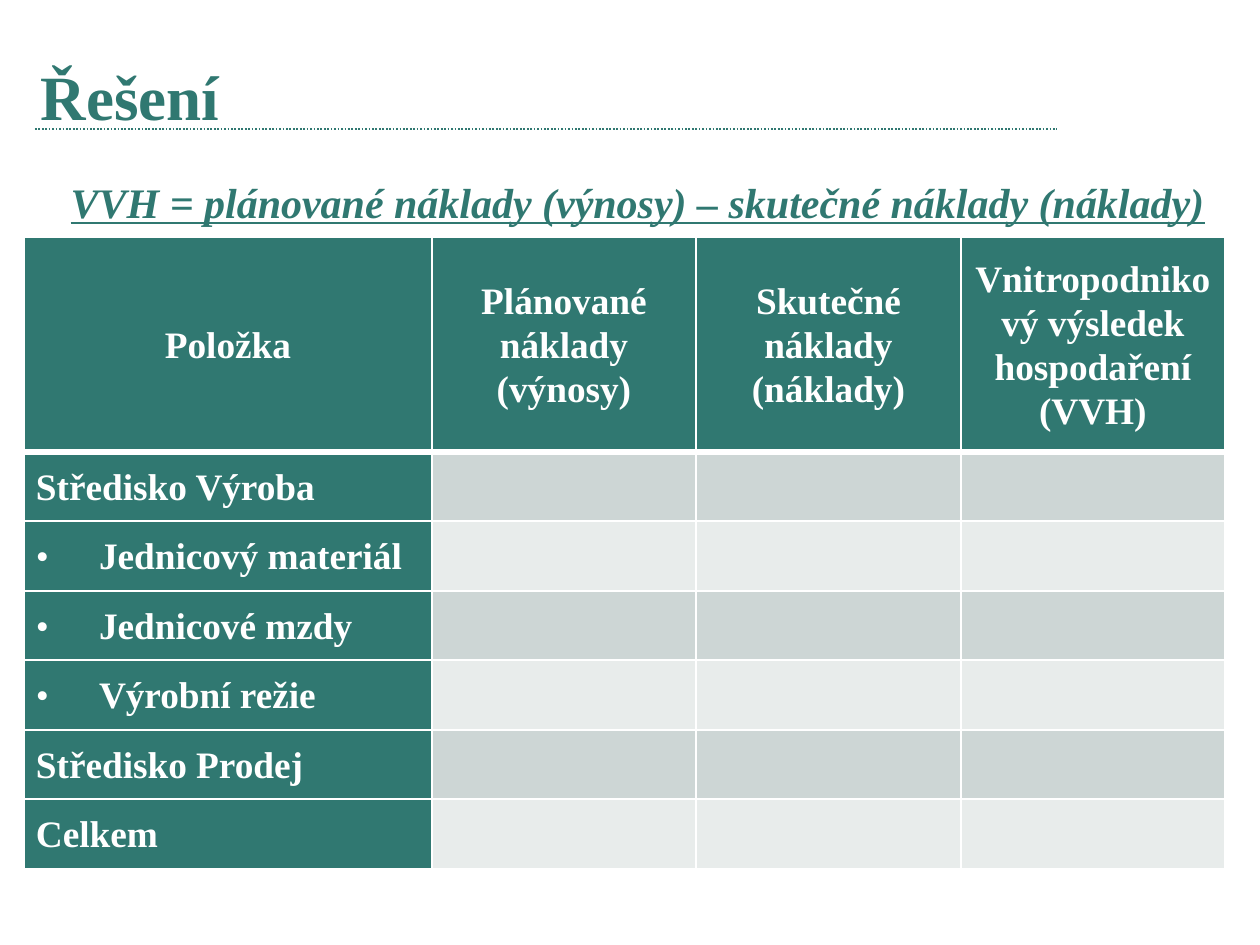
from lxml import etree
from pptx import Presentation, util as u
from pptx.dml.color import RGBColor
from pptx.enum import dml, shapes, text
from pptx.oxml.ns import qn

TEAL = RGBColor(0x30, 0x78, 0x71)
BAND_DARK = RGBColor(0xCD, 0xD6, 0xD5)
BAND_LIGHT = RGBColor(0xE8, 0xEC, 0xEB)
WHITE = RGBColor(0xFF, 0xFF, 0xFF)

HEADERS = ["Položka", "Plánované náklady (výnosy)", "Skutečné náklady (náklady)",
           "Vnitropodnikový výsledek hospodaření (VVH)"]
ITEMS = [("Středisko Výroba", False), ("Jednicový materiál", True),
         ("Jednicové mzdy", True), ("Výrobní režie", True),
         ("Středisko Prodej", False), ("Celkem", False)]


def px(n):
    return u.Inches(n / 168)


class Deck:
    font = "Times New Roman"

    def __init__(self, width, height):
        self.prs = Presentation()
        self.prs.slide_width, self.prs.slide_height = px(width), px(height)
        self.s = self.prs.slides.add_slide(self.prs.slide_layouts[5])

    def run(self, p, words, size, color, italic=False, underline=False):
        r = p.add_run()
        r.text = words
        f = r.font
        f.name, f.size, f.bold = self.font, u.Pt(size), True
        f.italic, f.underline = italic, underline
        f.color.rgb = color

    def title(self, words, x, y, w, h):
        sp = self.s.shapes.title
        sp.left, sp.top, sp.width, sp.height = map(px, (x, y, w, h))
        tf = sp.text_frame
        tf.vertical_anchor = text.MSO_ANCHOR.MIDDLE
        tf.margin_top, tf.margin_bottom = px(6), px(12)
        p = tf.paragraphs[0]
        p.alignment = text.PP_ALIGN.LEFT
        self.run(p, words, 27, TEAL)

    def rule(self, x1, x2, y):
        """Draw a dotted horizontal line."""
        line = self.s.shapes.add_connector(
            shapes.MSO_CONNECTOR.STRAIGHT, px(x1), px(y), px(x2), px(y))
        line.line.color.rgb = TEAL
        line.line.width = u.Pt(0.75)
        line.line.dash_style = dml.MSO_LINE.ROUND_DOT
        etree.SubElement(line._element.spPr, qn("a:effectLst"))

    def formula(self, words, x, y, w, h):
        tf = self.s.shapes.add_textbox(px(x), px(y), px(w), px(h)).text_frame
        tf.word_wrap = True
        p = tf.paragraphs[0]
        p.alignment = text.PP_ALIGN.CENTER
        self.run(p, words, 18, TEAL, italic=True, underline=True)

    def table(self, x, y, widths, heights):
        frame = self.s.shapes.add_table(len(heights), len(widths), px(x), px(y),
                                        px(sum(widths)), px(sum(heights)))
        for col, w in zip(frame.table.columns, widths):
            col.width = px(w)
        for row, h in zip(frame.table.rows, heights):
            row.height = px(h)
        return frame.table

    def borders(self, cell, top, bottom):
        tc_pr = cell._tc.get_or_add_tcPr()
        for side, points in (("L", 1), ("R", 1), ("T", top), ("B", bottom)):
            ln = etree.SubElement(tc_pr, qn("a:ln" + side), w=str(u.Pt(points)))
            fill = etree.SubElement(ln, qn("a:solidFill"))
            etree.SubElement(fill, qn("a:srgbClr"), val=str(WHITE))

    def cell(self, cell, fill, top=1, bottom=1):
        self.borders(cell, top, bottom)
        cell.fill.solid()
        cell.fill.fore_color.rgb = fill
        cell.margin_left = cell.margin_right = px(12)
        cell.margin_top = cell.margin_bottom = 0
        cell.vertical_anchor = text.MSO_ANCHOR.MIDDLE

    def cell_text(self, cell, words, align, bullet=False):
        p = cell.text_frame.paragraphs[0]
        p.alignment, p.line_spacing = align, 1.07
        if bullet:
            p_pr = p._p.get_or_add_pPr()
            p_pr.set("marL", str(px(63)))
            p_pr.set("indent", str(-px(63)))
            etree.SubElement(p_pr, qn("a:buFont"), typeface=self.font)
            etree.SubElement(p_pr, qn("a:buChar"), char="•")
        self.run(p, words, 16, WHITE)


def main():
    deck = Deck(1260, 945)
    deck.rule(35, 1057, 129)
    deck.title("Řešení", 24, 49, 1110, 99)

    table = deck.table(24, 237, [408, 264, 265, 264], [215] + [69, 70] * 3)
    for col, header in enumerate(HEADERS):
        cell = table.cell(0, col)
        deck.cell(cell, TEAL, bottom=3)
        deck.cell_text(cell, header, text.PP_ALIGN.CENTER)
    for row, (item, bullet) in enumerate(ITEMS, 1):
        band = BAND_DARK if row % 2 else BAND_LIGHT
        for col in range(len(HEADERS)):
            deck.cell(table.cell(row, col), band if col else TEAL,
                      top=3 if row == 1 else 1)
        deck.cell_text(table.cell(row, 0), item, text.PP_ALIGN.LEFT, bullet)

    deck.formula("VVH = plánované náklady (výnosy) – skutečné náklady (náklady)",
                 50, 168, 1176, 67)
    deck.prs.save("out.pptx")


if __name__ == "__main__":
    main()
